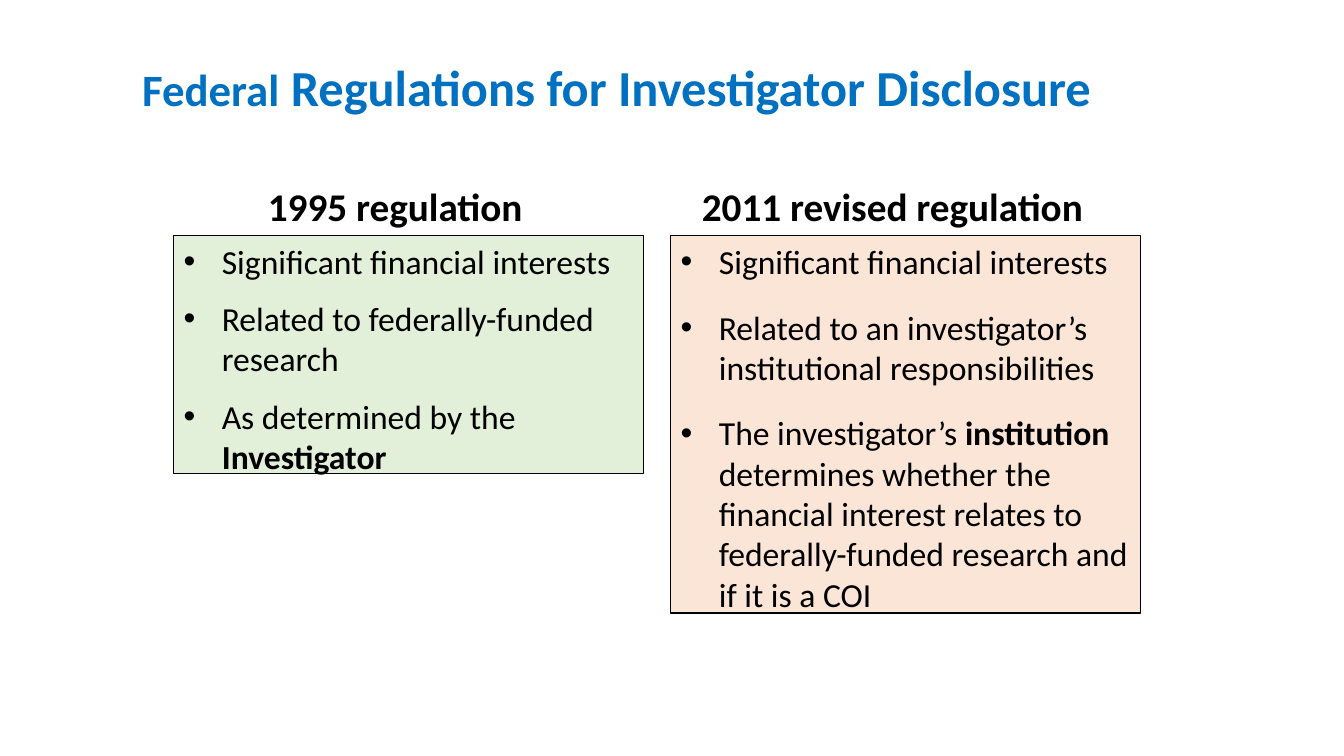
from pptx import Presentation
from pptx.dml.color import RGBColor as RGB
from pptx.enum.text import MSO_ANCHOR as ANCHOR, MSO_AUTO_SIZE as FIT, PP_ALIGN as ALIGN
from pptx.util import Emu, Pt
from lxml.etree import SubElement as add_sub
from pptx.oxml.ns import qn

SCALE = 9144  # EMU per px, 100 px to the inch
BLACK, BLUE, GREEN, PEACH = "000000", "0070C0", "E2F0D9", "FBE5D6"


def px(n):
    return Emu(n * SCALE)


def tint(code):
    return RGB.from_string(code)


def place(shape, left, top, width, height, anchor, fit):
    shape.left, shape.top = px(left), px(top)
    shape.width, shape.height = px(width), px(height)
    frame = shape.text_frame
    frame.word_wrap = True
    frame.auto_size = fit
    frame.vertical_anchor = anchor
    frame.margin_left = frame.margin_right = px(10)
    frame.margin_top = frame.margin_bottom = px(5)
    return frame


def add_run(par, text, size, color=BLACK, bold=False):
    run = par.add_run()
    run.text = text
    font = run.font
    font.name, font.size, font.bold = "Calibri", Pt(size), bold
    font.color.rgb = tint(color)


def set_bullet(par, mark=None, indent=0):
    props = par._p.get_or_add_pPr()
    props.set("marL", str(px(indent)))
    props.set("indent", str(px(-indent)))
    if mark:
        add_sub(props, qn("a:buFont")).set("typeface", "Arial")
        add_sub(props, qn("a:buChar")).set("char", mark)
    else:
        add_sub(props, qn("a:buNone"))


def add_title(shape):
    frame = place(shape, 131, 41, 1182, 97, ANCHOR.MIDDLE, FIT.NONE)
    par = frame.paragraphs[0]
    par.alignment, par.line_spacing = ALIGN.LEFT, 0.9
    add_run(par, "Federal", 32, BLUE, True)
    add_run(par, " Regulations for Investigator Disclosure", 36, BLUE, True)


def add_head(shape, text, left, width):
    frame = place(shape, left, 176, width, 57, ANCHOR.TOP, FIT.SHAPE_TO_FIT_TEXT)
    par = frame.paragraphs[0]
    par.alignment, par.space_before = ALIGN.CENTER, Pt(3.2)
    set_bullet(par)
    add_run(par, text, 28, bold=True)


def add_list(shape, items, left, height, fill, after):
    frame = place(shape, left, 234, 466, height, ANCHOR.TOP, FIT.SHAPE_TO_FIT_TEXT)
    shape.fill.solid()
    shape.fill.fore_color.rgb = tint(fill)
    shape.line.color.rgb = tint(BLACK)
    shape.line.width = Pt(0.75)
    for i, runs in enumerate(items):
        par = frame.add_paragraph() if i else frame.paragraphs[0]
        par.space_before = Pt(12)
        par.space_after = Pt(after if i < len(items) - 1 else 0)
        set_bullet(par, "•", 38)
        for text, bold in runs:
            add_run(par, text, 24, bold=bold)


def main():
    deck = Presentation()
    deck.slide_width, deck.slide_height = px(1333), px(750)
    # Comparison layout: title, then a heading and a list per column
    slide = deck.slides.add_slide(deck.slide_layouts[4])
    title, head_old, list_old, head_new, list_new = slide.placeholders
    add_title(title)

    # Left column
    add_head(head_old, "1995 regulation", 219, 346)
    add_list(list_old, [
        [("Significant financial interests", False)],
        [("Related to federally-funded research", False)],
        [("As determined by the ", False), ("Investigator", True)],
    ], 172, 246, GREEN, 0)

    # Right column
    add_head(head_new, "2011 revised regulation", 639, 492)
    add_list(list_new, [
        [("Significant financial interests", False)],
        [("Related to an investigator’s institutional responsibilities", False)],
        [("The investigator’s ", False), ("institution", True),
         (" determines whether the financial interest relates to "
          "federally-funded research and if it is a COI", False)],
    ], 665, 384, PEACH, 6)

    deck.save("out.pptx")


if __name__ == "__main__":
    main()
